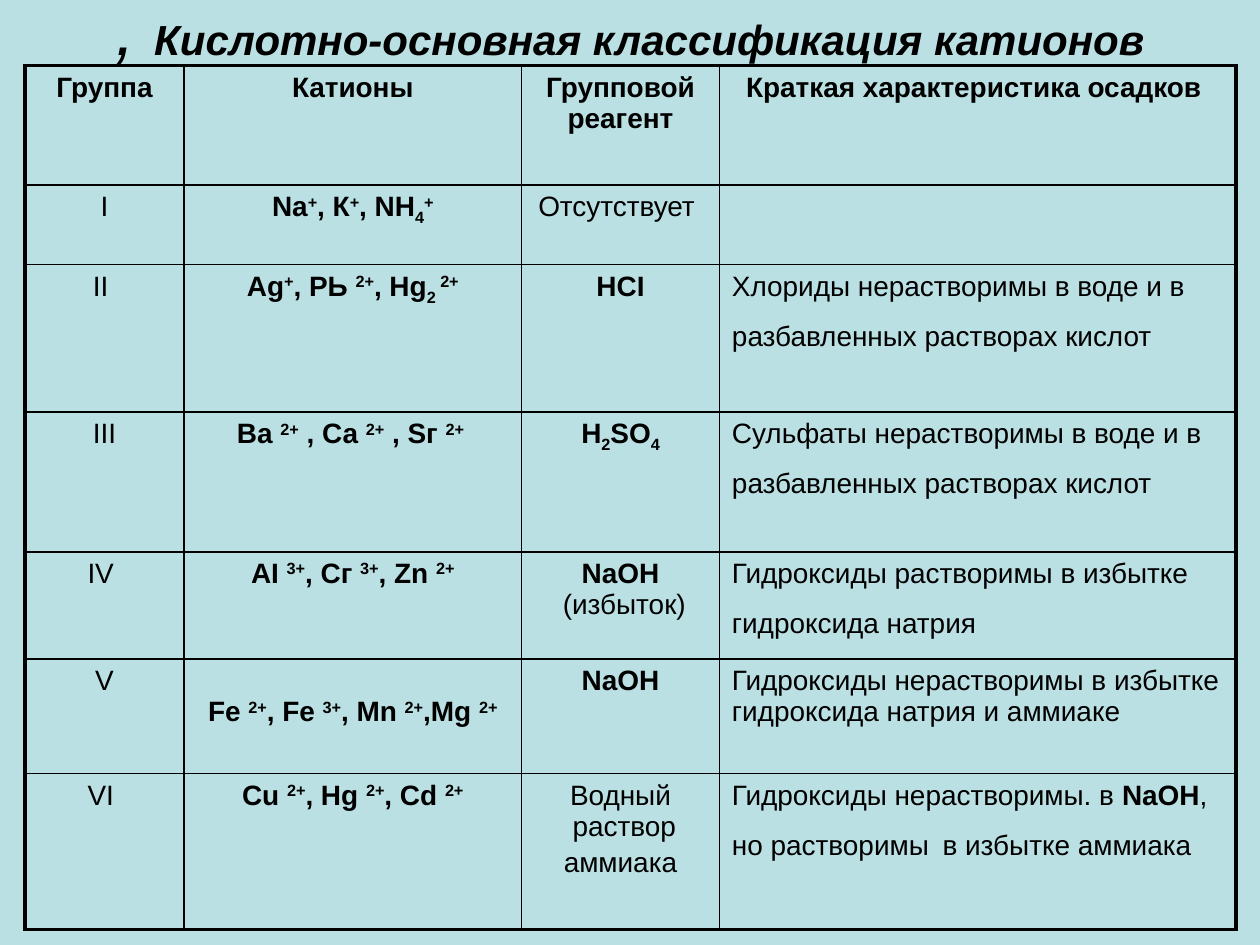
from dataclasses import dataclass

import pptx
import pptx.dml.color
import pptx.enum.text
import pptx.oxml
import pptx.oxml.ns
import pptx.util
from pptx.util import Inches


@dataclass(frozen=True)
class Theme:
    """Colours, font and type sizes of the slide."""
    font: str = "Arial"
    ink: str = "000000"
    paper: str = "BBE0E3"
    body: int = 16
    spacer: int = 28
    title: int = 24
    comma: int = 40
    grid: float = 1
    frame: float = 2.25


THEME = Theme()
CENTER = pptx.enum.text.PP_ALIGN.CENTER
LEFT = pptx.enum.text.PP_ALIGN.LEFT
COLUMNS = (1.26, 2.68, 1.57, 4.1)
HEIGHTS = (0.95, 0.63, 1.17, 1.11, 0.85, 0.91, 1.24)
LOWERED_CELL = (5, 1)

# Markup: *bold*, ^superscript^, _subscript_, ~large~, | line break, newline for a paragraph
ROWS = (
    ("*Группа*", "*Катионы*", "*Групповой реагент*", "*Краткая характеристика осадков *"),
    ("I", "*Nа^+^, К^+^, NH_4_^+^*", "Отсутствует ", ""),
    ("II ", "*Аg^+^, РЬ ^2+^, Нg_2 _^2+^*", "*НСI*",
     "Хлориды нерастворимы в воде и в разбавленных растворах кислот~ ~"),
    ("III", "*Ва ^2+^ , Са ^2+^ , Sг ^2+ ^*", "*Н_2_SO_4_*",
     "Сульфаты нерастворимы в воде и в разбавленных растворах кислот~ ~"),
    ("IV ", "*АI ^3+^, Сг ^3+^, Zn ^2+^*", "*NаОН*| (избыток)",
     "Гидроксиды растворимы в избытке гидроксида натрия~ ~"),
    ("V", "*Fе ^2+^, Fе ^3+^, Мn ^2+^,Мg ^2+^*", "*NaОH*",
     "Гидроксиды нерастворимы в избытке гидроксида натрия и аммиаке"),
    ("VI ", "*Cu ^2+^, Hg ^2+^, Cd ^2+^*", "Водный| раствор\nаммиака",
     "Гидроксиды нерастворимы. в *NаОН*, но растворимы~ ~в избытке аммиака~ ~"),
)


def add_span(para, text, size, bold=False, italic=False, baseline=0):
    """Append one formatted run to a paragraph."""
    span = para.add_run()
    span.text = text
    font = span.font
    font.name, font.size = THEME.font, pptx.util.Pt(size)
    font.bold, font.italic = bold, italic
    font.color.rgb = pptx.dml.color.RGBColor.from_string(THEME.ink)
    if baseline:
        font._element.set("baseline", str(baseline * 1000))


def write_markup(para, markup):
    """Turn marked-up text into runs and line breaks."""
    active = dict.fromkeys("*^_~", False)
    text = ""
    for symbol in markup + "|":
        if symbol not in active and symbol != "|":
            text += symbol
            continue
        if text:
            size = THEME.spacer if active["~"] else THEME.body
            baseline = 30 * active["^"] - 25 * active["_"]
            add_span(para, text, size, active["*"], baseline=baseline)
            text = ""
        if symbol in active:
            active[symbol] = not active[symbol]
        else:
            para.add_line_break()
    para._p.remove(para._p[-1])


def set_borders(cell, widths):
    """Draw the four cell edges with the given widths in points."""
    properties = cell._tc.get_or_add_tcPr()
    for side, width in widths.items():
        properties.append(pptx.oxml.parse_xml(
            f'<a:ln{side} {pptx.oxml.ns.nsdecls("a")} w="{pptx.util.Pt(width)}">'
            f'<a:solidFill><a:srgbClr val="{THEME.ink}"/></a:solidFill></a:ln{side}>'))


def fill_cell(cell, markup, align):
    """Write the paragraphs of a table cell."""
    frame = cell.text_frame
    for index, line in enumerate(markup.split("\n")):
        para = frame.add_paragraph() if index else frame.paragraphs[0]
        para.alignment = align
        if index:
            para.space_before = pptx.util.Pt(0.2 * THEME.body)
        write_markup(para, line)


def add_cations_table(page):
    """Add the table of cation groups."""
    table = page.shapes.add_table(
        len(ROWS), len(COLUMNS), Inches(0.2), Inches(0.52),
        Inches(sum(COLUMNS)), Inches(sum(HEIGHTS))).table
    table.first_row = table.horz_banding = False
    for column, width in zip(table.columns, COLUMNS):
        column.width = Inches(width)
    last_row, last_column = len(ROWS) - 1, len(COLUMNS) - 1
    for row, (height, texts) in enumerate(zip(HEIGHTS, ROWS)):
        table.rows[row].height = Inches(height)
        for column, markup in enumerate(texts):
            cell = table.cell(row, column)
            outer = {"L": column == 0, "R": column == last_column,
                     "T": row == 0, "B": row == last_row}
            set_borders(cell, {side: THEME.frame if edge else THEME.grid
                               for side, edge in outer.items()})
            cell.fill.background()
            if (row, column) == LOWERED_CELL:
                cell.margin_top = Inches(0.3)
            if markup:
                fill_cell(cell, markup, LEFT if row and column == last_column else CENTER)


def add_title(page):
    """Add the heading above the table."""
    box = page.shapes.add_textbox(Inches(0.5), Inches(0), Inches(9), Inches(0.44))
    frame = box.text_frame
    frame.word_wrap = True
    frame.vertical_anchor = pptx.enum.text.MSO_ANCHOR.MIDDLE
    para = frame.paragraphs[0]
    para.alignment = CENTER
    add_span(para, ", ", THEME.comma, italic=True)
    add_span(para, "Кислотно-основная классификация катионов", THEME.title,
             bold=True, italic=True)


def main():
    """Build and save the slide."""
    deck = pptx.Presentation()
    deck.slide_width, deck.slide_height = Inches(10), Inches(7.5)
    page = deck.slides.add_slide(deck.slide_layouts[6])
    page.background.fill.solid()
    page.background.fill.fore_color.rgb = pptx.dml.color.RGBColor.from_string(THEME.paper)
    add_title(page)
    add_cations_table(page)
    deck.save("out.pptx")


if __name__ == "__main__":
    main()
